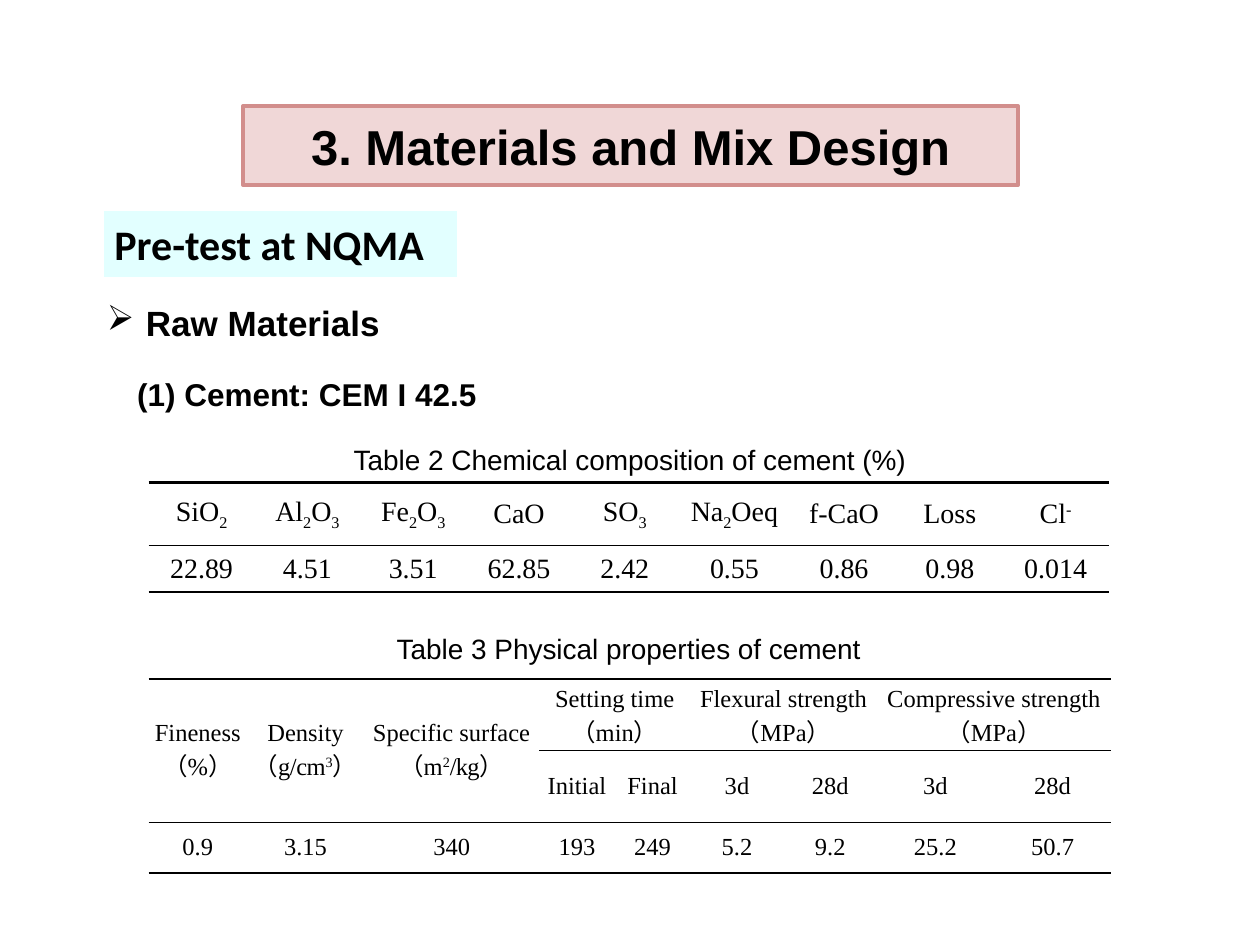
from lxml import etree
from pptx import Presentation
from pptx.dml.color import RGBColor
from pptx.enum import shapes, text
from pptx.oxml import ns
from pptx.util import Inches, Pt

BLACK = RGBColor(0, 0, 0)
WHITE = RGBColor(255, 255, 255)
PINK = RGBColor(0xE6, 0xB9, 0xB8)
ROSE = RGBColor(0xD2, 0x8E, 0x8C)
CYAN = RGBColor(0xCC, 0xFF, 0xFF)
CENTER, LEFT = text.PP_ALIGN.CENTER, text.PP_ALIGN.LEFT
MIDDLE, TOP = text.MSO_ANCHOR.MIDDLE, text.MSO_ANCHOR.TOP
BASELINES = {"_": "-25000", "^": "30000"}
TIGHT_UNITS = {"（g/cm|^3|）": "-30", "（m|^2|/kg）": "-50"}

deck = Presentation()
deck.slide_width, deck.slide_height = Inches(10), Inches(7.5)
page = deck.slides.add_slide(deck.slide_layouts[6])


def write(para, words, size, name="Arial", bold=False, align=LEFT):
    """Pieces between bars: a leading _ lowers the piece, ^ raises it."""
    para.alignment = align
    for piece in words.split("|"):
        span = para.add_run()
        if piece[0] in BASELINES:
            span.font._element.set("baseline", BASELINES[piece[0]])
            piece = piece[1:]
        if words in TIGHT_UNITS:
            span.font._element.set("spc", TIGHT_UNITS[words])
        span.text = piece
        for key, value in {"size": Pt(size), "name": name, "bold": bold}.items():
            setattr(span.font, key, value)
        span.font.color.rgb = BLACK


def fill_table(place, widths, heights, rows, size, side, rules, merges=()):
    """rules holds the line widths above, between and below the rows."""
    table = page.shapes.add_table(len(rows), len(widths), *map(Inches, place)).table
    table.first_row = table.horz_banding = False
    for column, width in zip(table.columns, widths):
        column.width = Inches(width)
    for row, height in zip(table.rows, heights):
        row.height = Inches(height)
    for r, row in enumerate(rows):
        for c, words in enumerate(row):
            cell = table.cell(r, c)
            formats = {"margin_left": Inches(side), "margin_right": Inches(side),
                       "vertical_anchor": MIDDLE}
            for key, value in formats.items():
                setattr(cell, key, value)
            borders = {"lnL": 0, "lnR": 0, "lnT": rules[r], "lnB": rules[r + 1]}
            # The first columns have no rule where two rows are merged
            if (r, c) in [(0, m[1]) for m in merges if m[2] > 0]:
                borders["lnB"] = rules[2]
            for tag, width in borders.items():
                line = etree.SubElement(cell._tc.get_or_add_tcPr(), ns.qn("a:" + tag))
                if width:
                    line.set("w", str(Pt(width)))
                    solid = etree.SubElement(line, ns.qn("a:solidFill"))
                    etree.SubElement(solid, ns.qn("a:srgbClr")).set("val", str(BLACK))
                else:
                    etree.SubElement(line, ns.qn("a:noFill"))
            cell.fill.background()
            if words:
                for i, part in enumerate(words.split("\n")):
                    frame = cell.text_frame
                    para = frame.add_paragraph() if i else frame.paragraphs[0]
                    write(para, part, size, "Times New Roman", align=CENTER)
    for r, c, last_row, last_column in merges:
        table.cell(r, c).merge(table.cell(last_row, last_column))


# Title and section banners
banners = [
    ((1.93, 0.84, 6.15, 0.63), PINK, ROSE, "3. Materials and Mix Design", 28, "Arial", CENTER),
    ((0.81, 1.66, 2.83, 0.55), CYAN, WHITE, "Pre-test at NQMA", 24, "Calibri", LEFT),
]
for place, color, edge, words, size, name, align in banners:
    banner = page.shapes.add_shape(shapes.MSO_SHAPE.RECTANGLE, *map(Inches, place))
    banner.shadow.inherit = False
    banner.fill.solid()
    banner.fill.fore_color.rgb = color
    tint = banner._element.spPr.find(".//" + ns.qn("a:srgbClr"))
    etree.SubElement(tint, ns.qn("a:alpha")).set("val", "56000")
    banner.line.color.rgb = edge
    banner.line.width = Pt(2)
    banner.text_frame.word_wrap = False
    banner.text_frame.vertical_anchor = MIDDLE
    write(banner.text_frame.paragraphs[0], words, size, name, True, align)

# Table captions
captions = [
    ((2.68, 3.46, 4.64, 0.37), "Table 2 Chemical composition of cement (%)", CENTER, TOP, False),
    ((3.05, 4.96, 3.91, 0.37), "Table 3 Physical properties of cement", LEFT, MIDDLE, True),
]
for place, words, align, anchor, wrap in captions:
    frame = page.shapes.add_textbox(*map(Inches, place)).text_frame
    frame.word_wrap = wrap
    frame.vertical_anchor = anchor
    write(frame.paragraphs[0], words, 16, align=align)

# Chemical composition
fill_table(
    (1.18, 3.83, 7.64, 0.87), [0.84] * 5 + [0.9] + [0.84] * 3, [0.5, 0.37],
    [["SiO|_2", "Al|_2|O|_3", "Fe|_2|O|_3", "CaO", "SO|_3", "Na|_2|Oeq",
      "f-CaO", "Loss", "Cl|^-"],
     ["22.89", "4.51", "3.51", "62.85", "2.42", "0.55", "0.86", "0.98", "0.014"]],
    16, 0.08, [1.5, 1, 1.5])

# Physical properties
fill_table(
    (1.18, 5.39, 7.64, 1.53),
    [0.78, 0.93, 1.39, 0.6, 0.6, 0.74, 0.74, 0.93, 0.93], [0.56, 0.57, 0.4],
    [["Fineness\n（%）", "Density\n（g/cm|^3|）", "Specific surface\n（m|^2|/kg）",
      "Setting time\n（min）", "", "Flexural strength\n（MPa）", "",
      "Compressive strength\n（MPa）", ""],
     ["", "", "", "Initial", "Final", "3d", "28d", "3d", "28d"],
     ["0.9", "3.15", "340", "193", "249", "5.2", "9.2", "25.2", "50.7"]],
    14, 0, [1.5, 1, 1, 1.5],
    [(0, c, 1, c) for c in range(3)] + [(0, c, 0, c + 1) for c in (3, 5, 7)])

# Raw materials heading and cement line
frame = page.shapes.add_textbox(*map(Inches, (0.55, 2.34, 9, 0.99))).text_frame
frame.word_wrap = True
heading, cement = frame.paragraphs[0], frame.add_paragraph()
write(heading, "Raw Materials", 20, bold=True)
write(cement, "(1) Cement: CEM I 42.5", 18, bold=True)
heading.space_after, cement.space_before = Pt(6), Pt(12)
cement.level = 1
for para, margin, indent in [(heading, 0.51, -0.31), (cement, 0.44, 0)]:
    props = para._p.get_or_add_pPr()
    props.set("marL", str(Inches(margin)))
    props.set("indent", str(Inches(indent)))
etree.SubElement(heading._p.pPr, ns.qn("a:buChar")).set("char", "➢")

deck.save("out.pptx")
